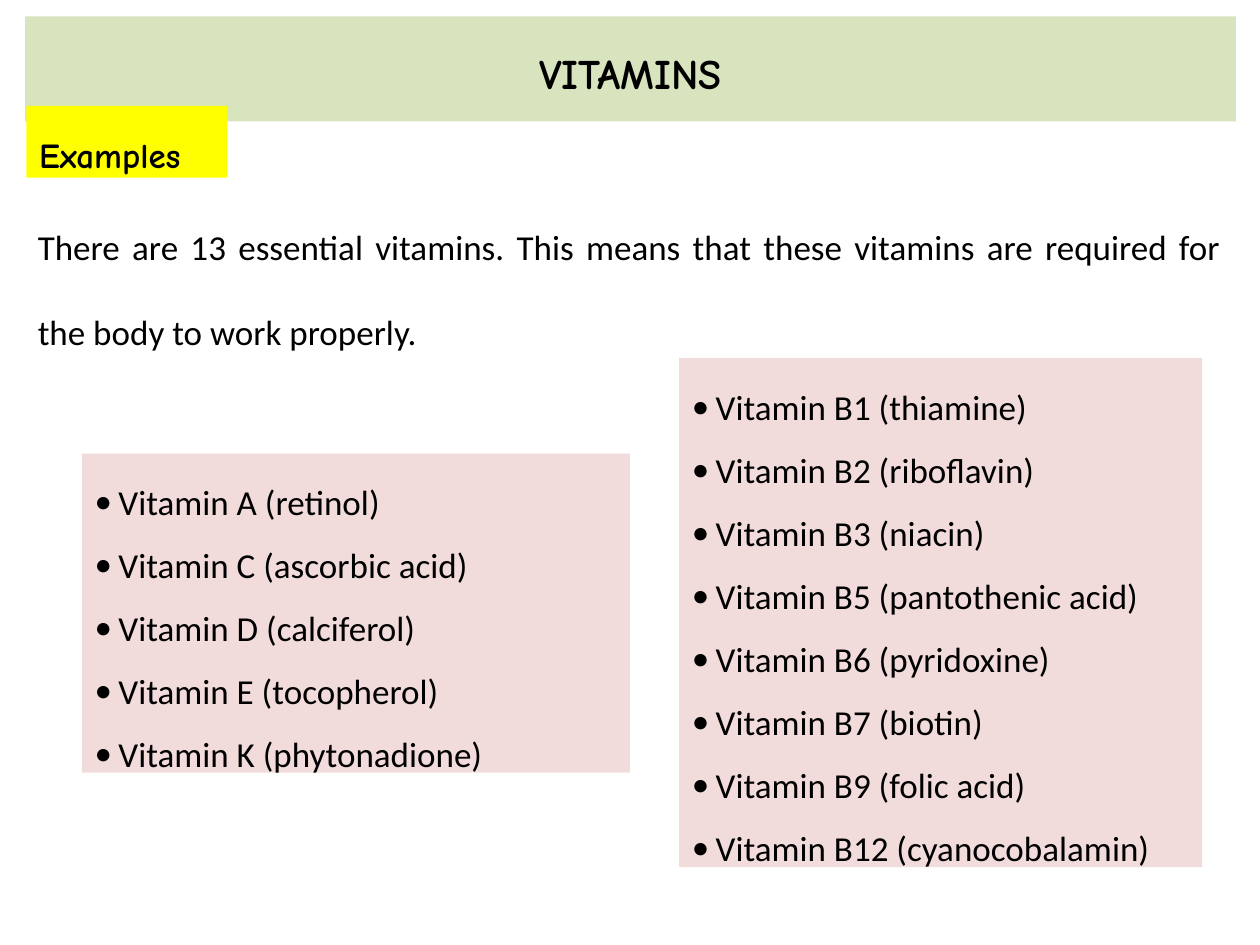
from dataclasses import dataclass

from lxml.etree import SubElement
from pptx import Presentation
from pptx.dml.color import RGBColor
from pptx.enum.text import MSO_ANCHOR, MSO_AUTO_SIZE, PP_ALIGN
from pptx.oxml.ns import qn
from pptx.util import Inches, Pt


@dataclass(frozen=True)
class Theme:
    ink: RGBColor = RGBColor.from_string("000000")
    paper: RGBColor = RGBColor.from_string("FFFFFF")
    banner: RGBColor = RGBColor.from_string("D7E4BD")
    label: RGBColor = RGBColor.from_string("FFFF00")
    panel: RGBColor = RGBColor.from_string("F2DCDB")
    heading_font: str = "Comic Neue"
    body_font: str = "Calibri"
    title_size: Pt = Pt(24)
    body_size: Pt = Pt(20)


THEME = Theme()
BULLET_INDENT = Inches(0.19)

FAT_SOLUBLE_AND_C = [
    "Vitamin A (retinol)",
    "Vitamin C (ascorbic acid)",
    "Vitamin D (calciferol)",
    "Vitamin E (tocopherol)",
    "Vitamin K (phytonadione)",
]
B_GROUP = [
    "Vitamin B1 (thiamine)",
    "Vitamin B2 (riboflavin)",
    "Vitamin B3 (niacin)",
    "Vitamin B5 (pantothenic acid)",
    "Vitamin B6 (pyridoxine)",
    "Vitamin B7 (biotin)",
    "Vitamin B9 (folic acid)",
    "Vitamin B12 (cyanocobalamin)",
]
INTRO = (
    "There are 13 essential vitamins. This means that these vitamins "
    "are required for the body to work properly."
)


def apply_format(target, values):
    for name, value in values.items():
        setattr(target, name, value)


def fill_region(region, box, lines, fill, font, paragraph, wrap=True):
    left, top, width, height = (Inches(length) for length in box)
    apply_format(region, {"left": left, "top": top, "width": width, "height": height})
    region.fill.solid()
    region.fill.fore_color.rgb = fill
    frame = region.text_frame
    apply_format(frame, {
        "text": "\n".join(lines),
        "word_wrap": wrap,
        "auto_size": MSO_AUTO_SIZE.SHAPE_TO_FIT_TEXT,
        "vertical_anchor": MSO_ANCHOR.TOP,
    })
    for para in frame.paragraphs:
        apply_format(para, {"space_before": Pt(0), **paragraph})
        for span in para.runs:
            apply_format(span.font, font)
            span.font.color.rgb = THEME.ink


def add_bullet(para):
    properties = para._p.get_or_add_pPr()
    properties.set("marL", str(BULLET_INDENT))
    properties.set("indent", str(-BULLET_INDENT))
    SubElement(properties, qn("a:buFont"), typeface=THEME.body_font)
    SubElement(properties, qn("a:buChar"), char="•")


def place_title(region, box):
    fill_region(
        region, box, ["VITAMINS"], THEME.banner,
        {"name": THEME.heading_font, "size": THEME.title_size, "bold": True},
        {"alignment": PP_ALIGN.CENTER, "line_spacing": 1.5},
    )


def place_label(region, box):
    fill_region(
        region, box, ["Examples"], THEME.label,
        {"name": THEME.heading_font, "size": THEME.body_size, "bold": True},
        {"alignment": PP_ALIGN.LEFT, "line_spacing": 1.5},
        wrap=False,
    )


def place_intro(region, box):
    fill_region(
        region, box, [INTRO], THEME.paper,
        {"name": THEME.body_font, "size": THEME.body_size, "bold": False},
        {"alignment": PP_ALIGN.JUSTIFY, "line_spacing": 2.0},
    )


def place_vitamin_list(region, box, vitamins):
    fill_region(
        region, box, vitamins, THEME.panel,
        {"name": THEME.body_font, "size": THEME.body_size, "bold": False},
        {"alignment": PP_ALIGN.JUSTIFY, "line_spacing": 1.5},
    )
    for para in region.text_frame.paragraphs:
        add_bullet(para)


def main():
    deck = Presentation()
    deck.slide_width, deck.slide_height = Inches(10), Inches(7.5)
    page = deck.slides.add_slide(deck.slide_layouts.get_by_name("Comparison"))
    title, label, left_list, intro, right_list = page.placeholders
    place_title(title, (0.2, 0.13, 9.61, 0.64))
    place_label(label, (0.21, 0.84, 1.59, 0.55))
    place_intro(intro, (0.2, 1.41, 9.59, 1.45))
    place_vitamin_list(left_list, (0.65, 3.6, 4.35, 2.63), FAT_SOLUBLE_AND_C)
    place_vitamin_list(right_list, (5.39, 2.84, 4.15, 4.14), B_GROUP)
    deck.save("out.pptx")


if __name__ == "__main__":
    main()
